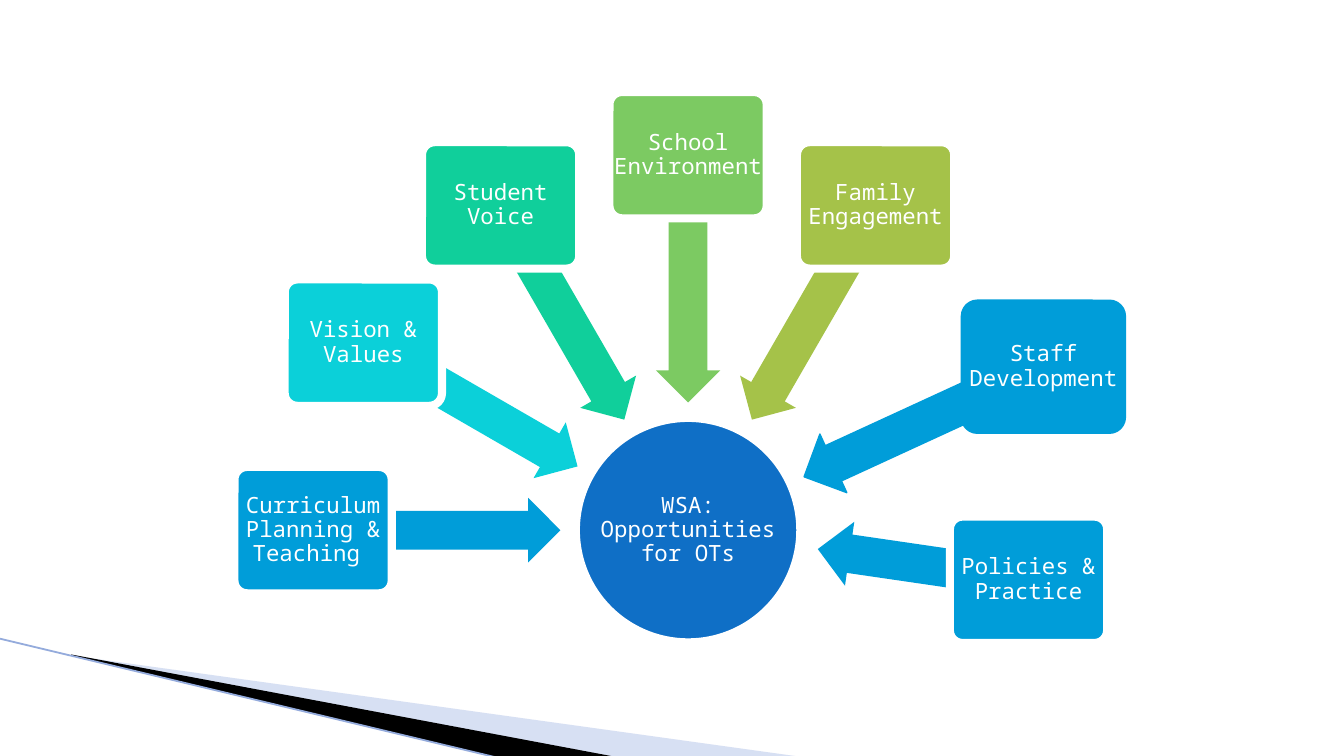
import math

import lxml.etree
import pptx
import pptx.dml.color
import pptx.enum.shapes
import pptx.enum.text
import pptx.oxml.ns
import pptx.util
from pptx.util import Inches

RGBColor = pptx.dml.color.RGBColor
Shape = pptx.enum.shapes.MSO_SHAPE

WHITE = RGBColor(0xFF, 0xFF, 0xFF)
BLACK = RGBColor(0x00, 0x00, 0x00)
NAVY = RGBColor(0x0F, 0x6F, 0xC6)
BLUE = RGBColor(0x00, 0x9D, 0xD9)
CYAN = RGBColor(0x0B, 0xD0, 0xD9)
TEAL = RGBColor(0x10, 0xCF, 0x9B)
GREEN = RGBColor(0x7C, 0xCA, 0x62)
OLIVE = RGBColor(0xA5, 0xC2, 0x49)
PALE = RGBColor(0x9D, 0xB2, 0xE1)
EDGE = RGBColor(0x94, 0xAB, 0xDC)

FONT = "Noto Sans Mono"
HUB_SIZE = 1.67
CARD_WIDTH, CARD_HEIGHT = 1.17, 0.94
ARROW_HEIGHT = 0.48
BORDER = 4.33

# label, colour, angle, card distance, arrow distance, arrow length, card border, arrow border
TOPICS = [
    ("Curriculum Planning & Teaching ", BLUE, 180, 2.79, 1.87, 1.84, WHITE, None),
    ("Vision & Values", CYAN, 210, 2.79, 1.87, 1.84, WHITE, None),
    ("Student Voice", TEAL, 240, 2.79, 1.87, 1.84, WHITE, None),
    ("School Environment", GREEN, 270, 2.79, 1.87, 1.84, WHITE, None),
    ("Family Engagement", OLIVE, 300, 2.79, 1.87, 1.84, WHITE, None),
    ("Policies & Practice", BLUE, 8.3, 2.56, 1.79, 1.63, WHITE, None),
    ("Staff Development", BLUE, 335.3, 2.91, 1.93, 1.96, BLUE, BLUE),
]


def style(shape, fill, border=None, border_width=BORDER):
    shape.shadow.inherit = False
    shape.fill.solid()
    shape.fill.fore_color.rgb = fill
    if border is None:
        shape.line.fill.background()
    else:
        shape.line.color.rgb = border
        shape.line.width = pptx.util.Pt(border_width)


def add_centred(page, kind, x, y, width, height):
    """Add a preset shape whose middle is at x, y."""
    return page.shapes.add_shape(kind, Inches(x - width / 2), Inches(y - height / 2),
                                 Inches(width), Inches(height))


def write_label(shape, text, inset):
    frame = shape.text_frame
    frame.word_wrap = True
    frame.vertical_anchor = pptx.enum.text.MSO_ANCHOR.MIDDLE
    frame.margin_left = frame.margin_right = Inches(inset)
    frame.margin_top = frame.margin_bottom = Inches(inset)
    para = frame.paragraphs[0]
    para.text = text
    para.alignment = pptx.enum.text.PP_ALIGN.CENTER
    para.line_spacing = 0.9
    para.font.name = FONT
    para.font.size = pptx.util.Pt(12)
    para.font.color.rgb = WHITE


def add_polygon(page, left, top, points, fill):
    corners = [(Inches(left + x), Inches(top + y)) for x, y in points]
    builder = page.shapes.build_freeform(*corners[0], scale=1.0)
    builder.add_line_segments(corners[1:], close=True)
    shape = builder.convert_to_shape()
    style(shape, fill)
    return shape


def add_corner_sweep(page, left, top):
    pale = add_polygon(page, left, top, [(0.55, 0.13), (5.95, 0.88), (4.56, 0.88)], PALE)
    colour = pale.fill._xPr.find(".//" + pptx.oxml.ns.qn("a:srgbClr"))
    lxml.etree.SubElement(colour, pptx.oxml.ns.qn("a:alpha"), val="40000")
    add_polygon(page, left, top,
                [(0.53, 0.12), (4.57, 0.88), (3.72, 0.89), (0.54, 0.13)], BLACK)
    edge = page.shapes.add_connector(
        pptx.enum.shapes.MSO_CONNECTOR.STRAIGHT,
        Inches(left - 0.01), Inches(top), Inches(left + 3.71), Inches(top + 0.89))
    edge.line.color.rgb = EDGE
    edge.line.width = pptx.util.Pt(0.95)
    lxml.etree.SubElement(edge._element.spPr, pptx.oxml.ns.qn("a:effectLst"))


def add_radial_diagram(page, left, top, width, height):
    """Place the hub at the bottom middle of the box, with topics pointing at it."""
    hub_x = left + width / 2
    hub_y = top + height - HUB_SIZE / 2
    hub = add_centred(page, Shape.OVAL, hub_x, hub_y, HUB_SIZE, HUB_SIZE)
    style(hub, NAVY, WHITE)
    # The label is wider than the text area inside an oval.
    hub_label = page.shapes.add_textbox(hub.left, hub.top, hub.width, hub.height)
    write_label(hub_label, "WSA: Opportunities for OTs", 0.01)

    for text, colour, angle, reach, arrow_reach, length, border, arrow_border in TOPICS:
        across, down = math.cos(math.radians(angle)), math.sin(math.radians(angle))
        arrow = add_centred(page, Shape.LEFT_ARROW, hub_x + arrow_reach * across,
                            hub_y + arrow_reach * down, length, ARROW_HEIGHT)
        arrow.rotation = angle
        arrow.adjustments[0] = 0.6
        arrow.adjustments[1] = 0.5
        style(arrow, colour, arrow_border, 0.75)

        card = add_centred(page, Shape.ROUNDED_RECTANGLE, hub_x + reach * across,
                           hub_y + reach * down, CARD_WIDTH, CARD_HEIGHT)
        card.adjustments[0] = 0.1
        style(card, colour, border)
        write_label(card, text, 0)


def main():
    deck = pptx.Presentation()
    deck.slide_width = Inches(10)
    deck.slide_height = deck.slide_width * 9 // 16
    page = deck.slides.add_slide(deck.slide_layouts[6])
    add_corner_sweep(page, 0, 4.75)
    add_radial_diagram(page, 1.75, 0.69, 6.74, 4.09)
    deck.save("out.pptx")


if __name__ == "__main__":
    main()
